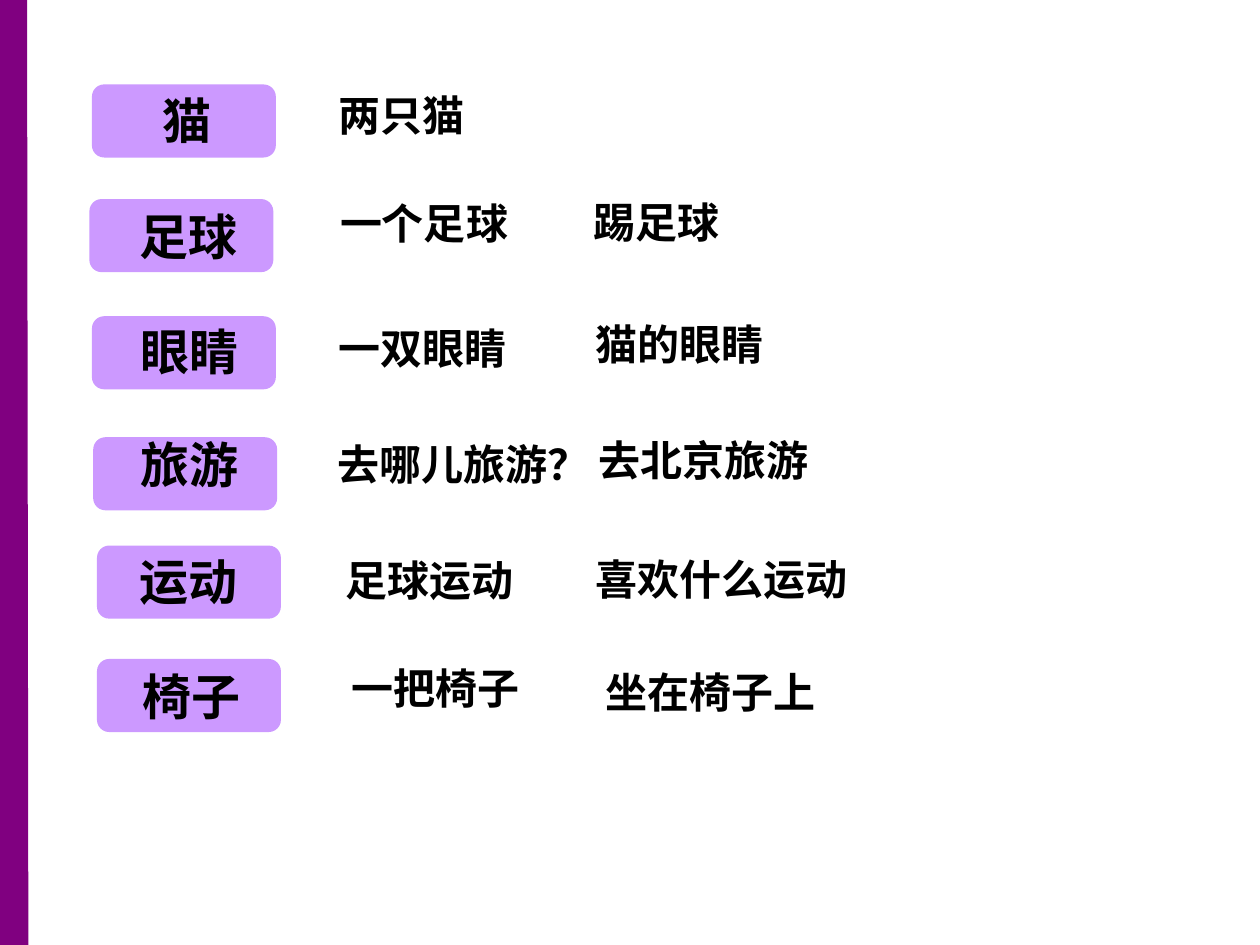
from pptx import Presentation
from pptx.dml.color import RGBColor
from pptx.enum.shapes import MSO_CONNECTOR, MSO_SHAPE
from pptx.enum.text import MSO_AUTO_SIZE as AutoSize
from pptx.oxml.ns import qn
from pptx.util import Inches, Pt
from lxml.etree import SubElement

PURPLE = RGBColor(0x80, 0x00, 0x80)
LILAC = RGBColor(0xCC, 0x99, 0xFF)
BLACK = RGBColor(0x00, 0x00, 0x00)
CHINESE_FONT = "Noto Sans CJK SC"
CARD_WIDTH, CARD_HEIGHT = 1.46, 0.58
MARGIN = 0.1

# Each row: card position, (word, left, top), then its (phrase, left, top) items
ROWS = [
    ((0.73, 0.67), ("猫", 1.19, 0.67), [("两只猫", 2.59, 0.66)]),
    ((0.71, 1.58), ("足球", 1.01, 1.59),
     [("一个足球", 2.6, 1.52), ("踢足球", 4.61, 1.51)]),
    ((0.73, 2.51), ("眼睛", 1.02, 2.5),
     [("一双眼睛", 2.59, 2.51), ("猫的眼睛", 4.63, 2.48)]),
    ((0.74, 3.47), ("旅游", 1.02, 3.4),
     [("去哪儿旅游？", 2.58, 3.43), ("去北京旅游", 4.65, 3.4)]),
    ((0.77, 4.33), ("运动", 1.01, 4.33),
     [("足球运动", 2.64, 4.35), ("喜欢什么运动", 4.63, 4.34)]),
    ((0.77, 5.23), ("椅子", 1.03, 5.24),
     [("一把椅子", 2.69, 5.21), ("坐在椅子上", 4.71, 5.24)]),
]


def add_side_bar(slide):
    bar = slide.shapes.add_connector(
        MSO_CONNECTOR.STRAIGHT, Inches(0.1), Inches(7.5), Inches(0.09), Inches(-0.02))
    bar.line.color.rgb = PURPLE
    bar.line.width = Pt(18)
    SubElement(bar._element.spPr, qn("a:effectLst"))


def add_card(slide, left, top):
    card = slide.shapes.add_shape(
        MSO_SHAPE.ROUNDED_RECTANGLE, Inches(left), Inches(top),
        Inches(CARD_WIDTH), Inches(CARD_HEIGHT))
    card.shadow.inherit = False
    card.fill.solid()
    card.fill.fore_color.rgb = LILAC
    card.line.fill.background()


def add_text(slide, text, left, top, *, size, font=CHINESE_FONT, height=0.5):
    """Add one bold line in a box as wide as its full-width characters."""
    width = len(text) * size / 72 + 2 * MARGIN
    box = slide.shapes.add_textbox(
        Inches(left), Inches(top), Inches(width), Inches(height))
    frame = box.text_frame
    frame.word_wrap = False
    frame.auto_size = AutoSize.SHAPE_TO_FIT_TEXT
    run = frame.paragraphs[0].add_run()
    run.text = text
    run.font.name = font
    run.font.size = Pt(size)
    run.font.bold = True
    run.font.color.rgb = BLACK
    SubElement(run.font._element, qn("a:ea"), typeface=CHINESE_FONT)


def main():
    presentation = Presentation()
    presentation.slide_width = Inches(10)
    presentation.slide_height = Inches(7.5)
    slide = presentation.slides.add_slide(presentation.slide_layouts[6])

    add_side_bar(slide)
    for card, word, phrases in ROWS:
        add_card(slide, *card)
        add_text(slide, *word, size=28, font="Calibri", height=0.57)
        for phrase in phrases:
            add_text(slide, *phrase, size=24)

    presentation.save("out.pptx")


if __name__ == "__main__":
    main()
